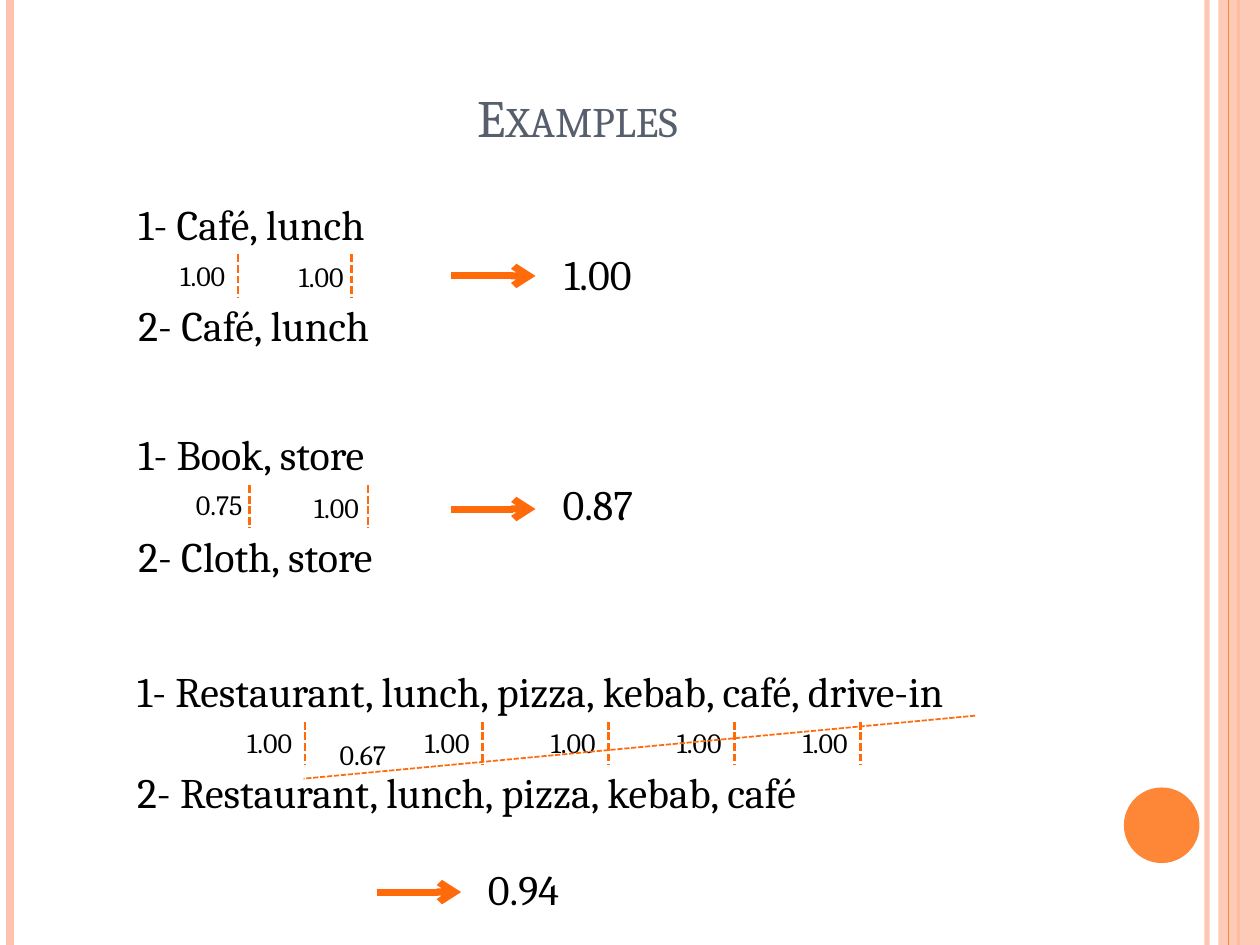
from lxml.etree import SubElement
from pptx import Presentation
from pptx.dml.color import RGBColor
from pptx.enum.dml import MSO_LINE
from pptx.enum.shapes import MSO_CONNECTOR, MSO_SHAPE
from pptx.enum.text import MSO_ANCHOR, MSO_AUTO_SIZE, PP_ALIGN
from pptx.oxml.ns import qn
from pptx.util import Inches, Pt

COLORS = {
    "text": "000000",
    "title": "575F6D",
    "accent": "FE8637",
    "pale": "FEC3AE",
    "mark": "FF6B0A",
}
FONT = "Cambria"
COLUMNS, ROWS = 100, 75


def write_text(paragraph, text, size=24, color="text", align=None, small_caps=False):
    """Add a formatted run to a paragraph."""
    run = paragraph.add_run()
    run.text = text
    run.font.name = FONT
    run.font.size = Pt(size)
    run.font.color.rgb = RGBColor.from_string(COLORS[color])
    paragraph.alignment = align
    if small_caps:
        run.font._element.set("cap", "small")


def set_alpha(fill_parent, percent):
    """Make the solid colour below an XML element partly transparent."""
    color = fill_parent.find(qn("a:solidFill"))[0]
    SubElement(color, qn("a:alpha"), val=str(percent * 1000))


class SlideBuilder:
    """Draw styled elements on one slide, measured in grid columns and rows."""

    def __init__(self, presentation):
        """Add a title-only slide and work out the grid cell."""
        self.slide = presentation.slides.add_slide(presentation.slide_layouts[5])
        self.cell_width = presentation.slide_width / COLUMNS
        self.cell_height = presentation.slide_height / ROWS

    def scale(self, *lengths):
        """Turn alternating columns and rows into slide lengths."""
        cells = (self.cell_width, self.cell_height) * 2
        return [round(length * cell) for length, cell in zip(lengths, cells)]

    def title(self, text, *box):
        """Place and format the title placeholder."""
        title = self.slide.shapes.title
        title.left, title.top, title.width, title.height = self.scale(*box)
        title.text_frame.vertical_anchor = MSO_ANCHOR.MIDDLE
        write_text(title.text_frame.paragraphs[0], text, size=30, color="title",
                   align=PP_ALIGN.CENTER, small_caps=True)

    def shape(self, kind, *box, color, alpha=100):
        """Add a filled shape without an outline."""
        shape = self.slide.shapes.add_shape(kind, *self.scale(*box))
        shape.shadow.inherit = False
        shape.fill.solid()
        shape.fill.fore_color.rgb = RGBColor.from_string(COLORS[color])
        shape.line.fill.background()
        if alpha < 100:
            set_alpha(shape._element.spPr, alpha)

    def line(self, *ends, color="mark", width=1.5, dashed=False, arrow=False, alpha=100):
        """Add a straight line, optionally dashed or with an arrowhead."""
        line = self.slide.shapes.add_connector(MSO_CONNECTOR.STRAIGHT, *self.scale(*ends))
        line.line.color.rgb = RGBColor.from_string(COLORS[color])
        line.line.width = Pt(width)
        outline = line.line._get_or_add_ln()
        if dashed:
            line.line.dash_style = MSO_LINE.SQUARE_DOT
        if arrow:
            SubElement(outline, qn("a:tailEnd"), type="arrow")
        if alpha < 100:
            set_alpha(outline, alpha)
        SubElement(line._element.spPr, qn("a:effectLst"))

    def number(self, text, left, top, width=4.4, height=2.7, size=16):
        """Add a centred number in a tight box."""
        box = self.slide.shapes.add_textbox(*self.scale(left, top, width, height))
        frame = box.text_frame
        frame.margin_left = frame.margin_right = frame.margin_top = frame.margin_bottom = 0
        frame.word_wrap = False
        frame.vertical_anchor = MSO_ANCHOR.MIDDLE
        write_text(frame.paragraphs[0], text, size=size, align=PP_ALIGN.CENTER)

    def pair(self, first, second, left, top, width, indent=0):
        """Add two word lists with a line's gap between them."""
        box = self.slide.shapes.add_textbox(*self.scale(left, top, width, 13.1))
        frame = box.text_frame
        frame.word_wrap = True
        frame.auto_size = MSO_AUTO_SIZE.SHAPE_TO_FIT_TEXT
        frame.vertical_anchor = MSO_ANCHOR.MIDDLE
        for paragraph, text in ((frame.paragraphs[0], first), (frame.add_paragraph(), second)):
            write_text(paragraph, text)
            paragraph._p.get_or_add_pPr().set("indent", str(Inches(indent)))
        paragraph.space_before = Pt(29)

    def match(self, score, column, row, score_left, score_top):
        """Add a dashed link between two words and its score."""
        self.line(column, row, column, row + 3.35, dashed=True)
        self.number(score, score_left, score_top)

    def result(self, score, arrow_left, arrow_row, score_top):
        """Add an arrow that points to the total score."""
        self.line(arrow_left, arrow_row, arrow_left + 6.7, arrow_row, width=4, arrow=True)
        self.number(score, arrow_left + 8.4, score_top, 6.5, 4, size=24)


def main():
    """Build and save the slide."""
    presentation = Presentation()
    presentation.slide_width, presentation.slide_height = Inches(10), Inches(7.5)
    builder = SlideBuilder(presentation)

    for column, color, width, alpha in ((95.8, "pale", 3, 93), (0.83, "pale", 4.5, 100),
                                        (98.3, "accent", 1.5, 100)):
        builder.line(column, 0, column, ROWS, color=color, width=width, alpha=alpha)
    builder.shape(MSO_SHAPE.RECTANGLE, 96.7, 0, 3.3, ROWS, color="pale", alpha=87)
    builder.line(97.5, 0, 97.5, ROWS, color="accent", width=0.75)
    builder.shape(MSO_SHAPE.OVAL, 89.2, 62.5, 6, 6, color="accent")

    builder.title("Examples", 5, 3, 81.7, 12.5)
    builder.pair("1- Café, lunch", "2- Café, lunch", 7.5, 15.2, 29.2, indent=0.25)
    builder.pair("1- Book, store", "2- Cloth, store", 7.5, 33.5, 26.7, indent=0.25)
    builder.pair("1- Restaurant, lunch, pizza, kebab, café, drive-in",
                 "2- Restaurant, lunch, pizza, kebab, café", 9.9, 52.3, 77.5)

    for match in (("1.00", 18.9, 20.2, 13.9, 20.5), ("1.00", 27.9, 20.2, 23.3, 20.6),
                  ("0.75", 19.8, 38.5, 15.2, 38.7), ("1.00", 29.2, 38.5, 24.5, 38.9)):
        builder.match(*match)
    for column in (24.2, 38.3, 48.3, 58.3, 68.3):
        builder.match("1.00", column, 57.3, column - 5, 57.6)
    builder.line(77.4, 56.8, 24.1, 61.8, width=1, dashed=True)
    builder.number("0.67", 26.6, 58.5)

    for result in (("1.00", 35.8, 21.9, 19.7), ("0.87", 35.8, 40.4, 38),
                   ("0.94", 29.9, 70.8, 68.5)):
        builder.result(*result)
    presentation.save("out.pptx")


if __name__ == "__main__":
    main()
